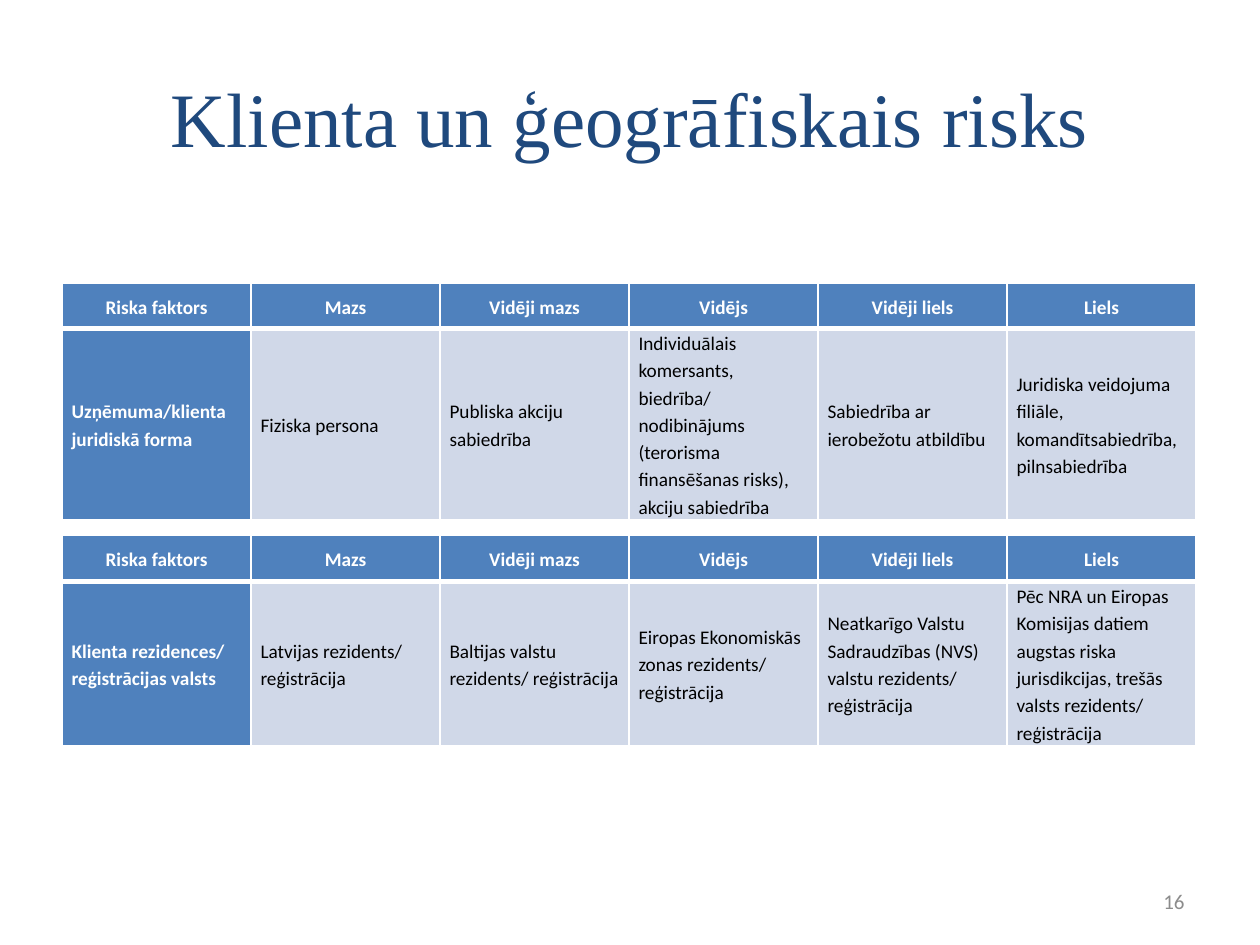
"""Builds the slide on client and geographic risk with its two risk tables."""
from lxml import etree
from pptx import Presentation
from pptx.dml.color import RGBColor
from pptx.enum import text
from pptx.oxml import ns
from pptx.util import Pt

TITLE = "Klienta un ģeogrāfiskais risks"
SLIDE_NUMBER = "16"
HEADERS = ["Riska faktors", "Mazs", "Vidēji mazs", "Vidējs", "Vidēji liels", "Liels"]
TABLES = [
    {
        "top": 162,
        "heights": (25.6, 109.4),
        "body": [
            "Uzņēmuma/klienta juridiskā forma",
            "Fiziska persona",
            "Publiska akciju sabiedrība",
            "Individuālais komersants, biedrība/ nodibinājums (terorisma finansēšanas risks), akciju sabiedrība",
            "Sabiedrība ar ierobežotu atbildību",
            "Juridiska veidojuma filiāle, komandītsabiedrība, pilnsabiedrība",
        ],
    },
    {
        "top": 306,
        "heights": (26.2, 93.8),
        "body": [
            "Klienta rezidences/ reģistrācijas valsts",
            "Latvijas rezidents/ reģistrācija",
            "Baltijas valstu rezidents/ reģistrācija",
            "Eiropas Ekonomiskās zonas rezidents/ reģistrācija",
            "Neatkarīgo Valstu Sadraudzības (NVS) valstu rezidents/ reģistrācija",
            "Pēc NRA un Eiropas Komisijas datiem augstas riska jurisdikcijas, trešās valsts rezidents/ reģistrācija",
        ],
    },
]
TABLE_LEFT, COLUMN_WIDTH = 35.5, 108
CELL_INSET = 5.4
THIN, THICK = 1, 3

THEME = {
    "title_font": "Times New Roman", "body_font": "Calibri",
    "title_size": 44, "cell_size": 11, "number_size": 12,
    "title": "1F497D", "accent": "4F81BD", "band": "D0D8E8",
    "light": "FFFFFF", "dark": "000000", "muted": "8C8C8C",
}


def write(frame, words, font, size, color, align, bold=False):
    frame.word_wrap = True
    frame.vertical_anchor = text.MSO_ANCHOR.MIDDLE
    paragraph = frame.paragraphs[0]
    paragraph.alignment = align
    run = paragraph.add_run()
    run.text = words
    run.font.name = THEME[font]
    run.font.size = Pt(THEME[size])
    run.font.bold = bold
    run.font.color.rgb = RGBColor.from_string(THEME[color])
    return paragraph


def add_borders(cell, widths):
    properties = cell._tc.get_or_add_tcPr()
    for side, width in widths.items():
        line = etree.SubElement(properties, ns.qn(f"a:ln{side}"), w=str(Pt(width)))
        fill = etree.SubElement(line, ns.qn("a:solidFill"))
        etree.SubElement(fill, ns.qn("a:srgbClr"), val=THEME["light"])


def format_cell(cell, words, is_header, is_factor):
    strong = is_header or is_factor
    align = text.PP_ALIGN.CENTER if is_header else text.PP_ALIGN.LEFT
    paragraph = write(cell.text_frame, words, "body_font", "cell_size",
                      "light" if strong else "dark", align, strong)
    paragraph.line_spacing = 1.15
    cell.vertical_anchor = text.MSO_ANCHOR.MIDDLE
    cell.margin_left = cell.margin_right = Pt(CELL_INSET)
    cell.margin_top = cell.margin_bottom = 0
    add_borders(cell, {"L": THIN, "R": THIN,
                       "T": THIN if is_header else THICK,
                       "B": THICK if is_header else THIN})
    cell.fill.solid()
    cell.fill.fore_color.rgb = RGBColor.from_string(THEME["accent" if strong else "band"])


def add_risk_table(slide, top, heights, body):
    rows = [HEADERS, body]
    table = slide.shapes.add_table(
        len(rows), len(HEADERS), Pt(TABLE_LEFT), Pt(top),
        Pt(COLUMN_WIDTH * len(HEADERS)), Pt(sum(heights))).table
    for column in table.columns:
        column.width = Pt(COLUMN_WIDTH)
    for row_index, (height, row) in enumerate(zip(heights, rows)):
        table.rows[row_index].height = Pt(height)
        for column_index, words in enumerate(row):
            format_cell(table.cell(row_index, column_index), words,
                        row_index == 0, column_index == 0)


def main():
    presentation = Presentation()
    presentation.slide_width, presentation.slide_height = Pt(720), Pt(540)
    slide = presentation.slides.add_slide(presentation.slide_layouts[5])

    title = slide.shapes.title
    title.left, title.top, title.width, title.height = Pt(36), Pt(21.6), Pt(648), Pt(90)
    write(title.text_frame, TITLE, "title_font", "title_size", "title", text.PP_ALIGN.CENTER)

    number = slide.shapes.add_textbox(Pt(516), Pt(500.5), Pt(168), Pt(28.75))
    write(number.text_frame, SLIDE_NUMBER, "body_font", "number_size", "muted",
          text.PP_ALIGN.RIGHT)

    for risk_table in TABLES:
        add_risk_table(slide, **risk_table)
    presentation.save("out.pptx")


if __name__ == "__main__":
    main()
